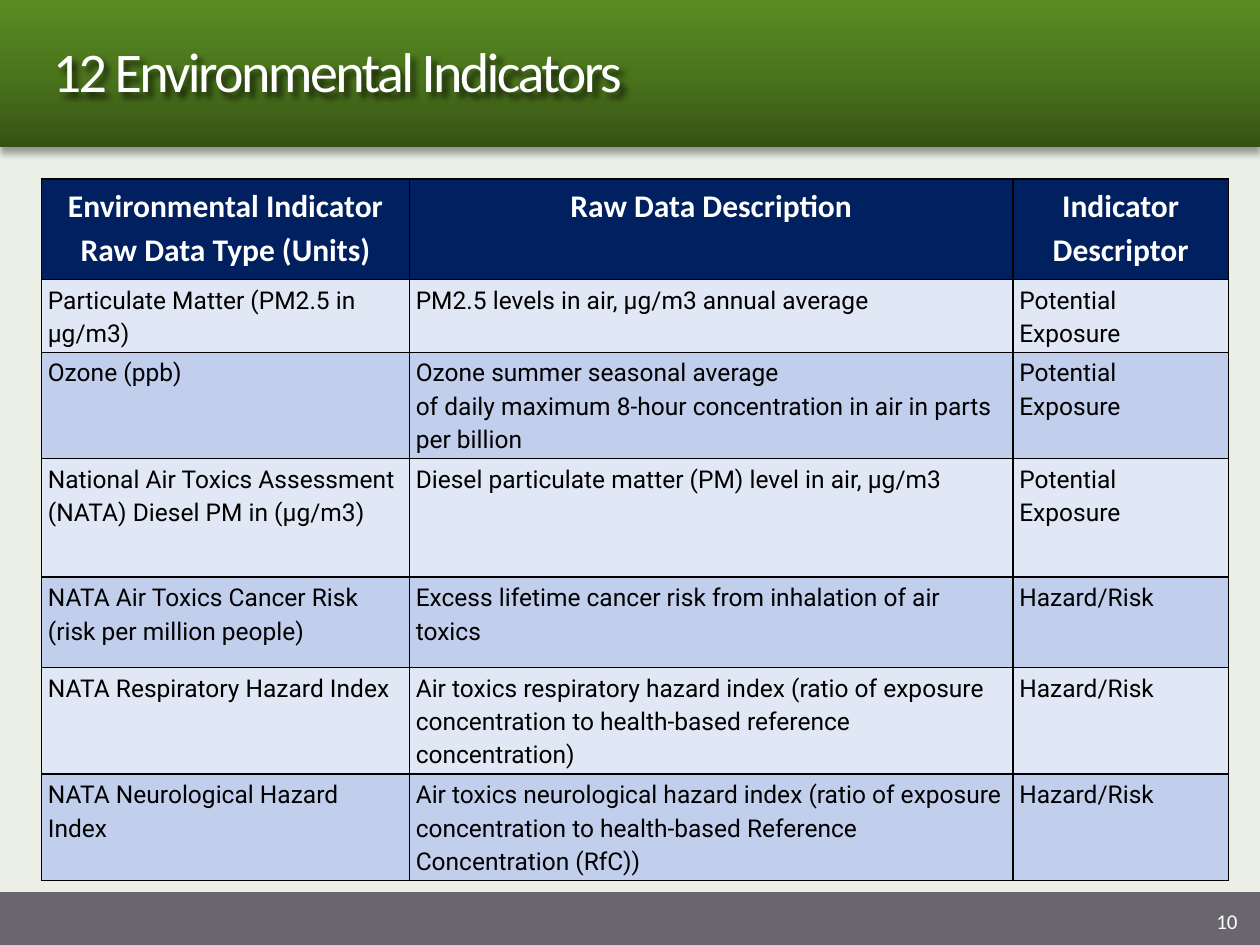
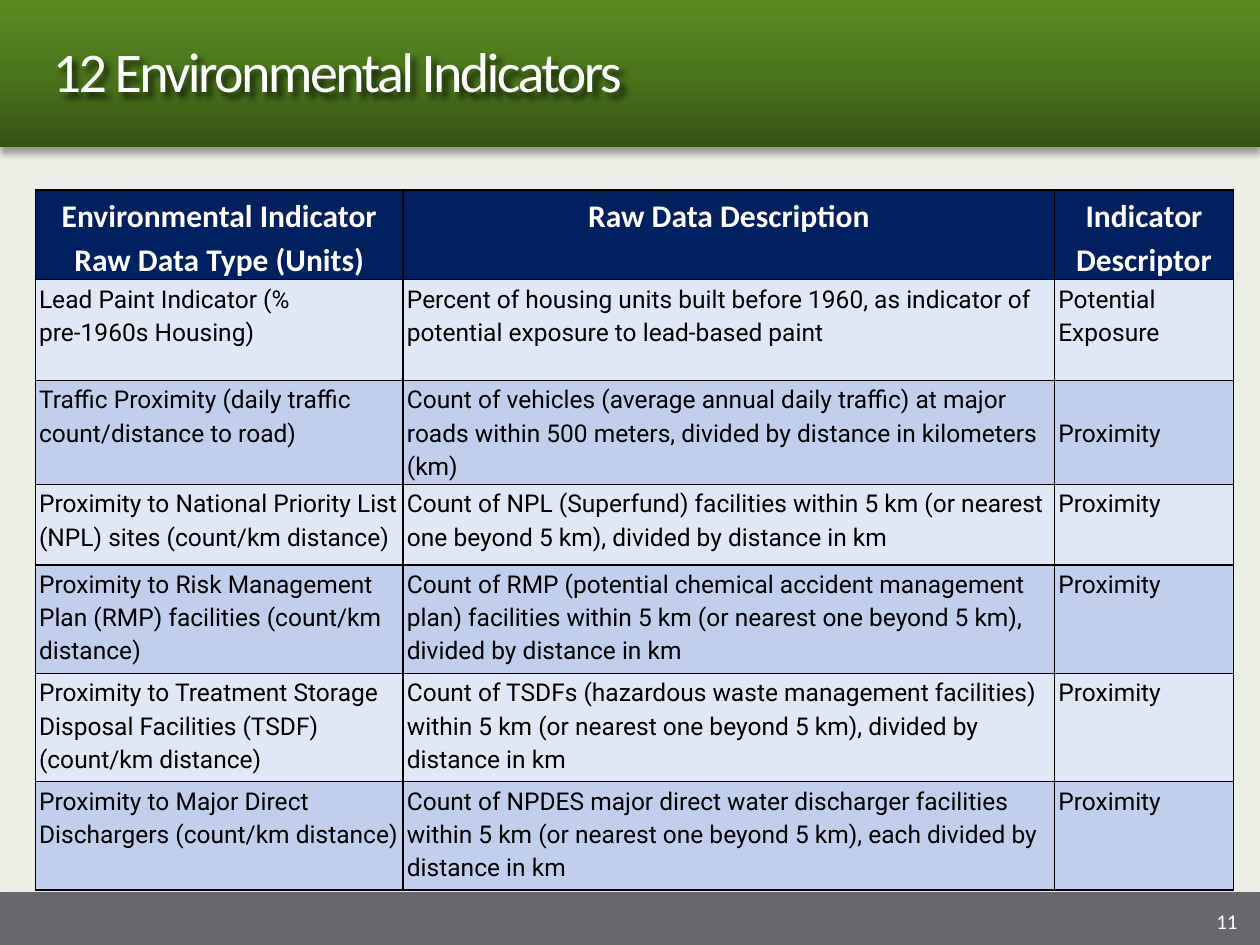
from copy import deepcopy

from pptx import Presentation
from pptx import oxml
from pptx import util as u
from pptx.dml.color import RGBColor
from pptx.enum import shapes, text
from pptx.oxml import ns

PAGE = RGBColor(0xEB, 0xEF, 0xE6)
GREENS = [(0, RGBColor(0x35, 0x52, 0x14)),
          (0.5, RGBColor(0x4B, 0x75, 0x1C)),
          (1, RGBColor(0x59, 0x8B, 0x21))]
GRAY = RGBColor(0x69, 0x67, 0x6D)
NAVY = RGBColor(0x00, 0x20, 0x60)
STRIPES = [RGBColor(0xE0, 0xE7, 0xF5), RGBColor(0xC1, 0xCE, 0xEC)]
WHITE = RGBColor(0xFF, 0xFF, 0xFF)
BLACK = RGBColor(0x00, 0x00, 0x00)

WIDTH, HEIGHT = 10, 7.5
HEADER_H, FOOTER_H = 1.17, 0.42
TITLE = "12 Environmental Indicators"
HEADINGS = ("Environmental Indicator Raw Data Type (Units)",
            "Raw Data Description", "Indicator Descriptor")

PAGES = [
    {
        "number": "10",
        "at": (0.33, 1.42),
        "margins": (0.05, 0.02),
        "cols": [2.92, 4.79, 1.71],
        "rows": [0.8, 0.55, 0.82, 0.94, 0.72, 0.71, 0.82],
        "centred": [],
        "indicators": [
            ("Particulate Matter (PM2.5 in µg/m3)",
             "PM2.5 levels in air, µg/m3 annual average",
             "Potential Exposure"),
            ("Ozone (ppb)",
             "Ozone summer seasonal average\n"
             "of daily maximum 8-hour concentration in air in parts per billion",
             "Potential Exposure"),
            ("National Air Toxics Assessment (NATA) Diesel PM in (µg/m3)",
             "Diesel particulate matter (PM) level in air, µg/m3",
             "Potential Exposure"),
            ("NATA Air Toxics Cancer Risk (risk per million people)",
             "Excess lifetime cancer risk from inhalation of air toxics",
             "Hazard/Risk"),
            ("NATA Respiratory Hazard Index",
             "Air toxics respiratory hazard index (ratio of exposure "
             "concentration to health-based reference concentration)",
             "Hazard/Risk"),
            ("NATA Neurological Hazard Index",
             "Air toxics neurological hazard index (ratio of exposure "
             "concentration to health-based Reference Concentration (RfC))",
             "Hazard/Risk"),
        ],
    },
    {
        "number": "11",
        "at": (0.28, 1.51),
        "margins": (0.03, 0.01),
        "cols": [2.92, 5.17, 1.42],
        "rows": [0.69, 0.8, 0.59, 0.64, 0.86, 0.86, 0.86],
        "centred": [(2, 2)],
        "indicators": [
            ("Lead Paint Indicator (% pre-1960s Housing)",
             "Percent of housing units built before 1960, as indicator of "
             "potential exposure to lead-based paint",
             "Potential\nExposure"),
            ("Traffic Proximity (daily traffic count/distance to road)",
             "Count of vehicles (average annual daily traffic) at major roads "
             "within 500 meters, divided by distance in kilometers (km)",
             "Proximity"),
            ("Proximity to National Priority List (NPL) sites (count/km distance)",
             "Count of NPL (Superfund) facilities within 5 km (or nearest one "
             "beyond 5 km), divided by distance in km",
             "Proximity"),
            ("Proximity to Risk Management Plan (RMP) facilities (count/km distance)",
             "Count of RMP (potential chemical accident management plan) facilities "
             "within 5 km (or nearest one beyond 5 km), divided by distance in km",
             "Proximity"),
            ("Proximity to Treatment Storage Disposal Facilities (TSDF) "
             "(count/km distance)",
             "Count of TSDFs (hazardous waste management facilities) within 5 km "
             "(or nearest one beyond 5 km), divided by distance in km",
             "Proximity"),
            ("Proximity to Major Direct Dischargers (count/km distance)",
             "Count of NPDES major direct water discharger facilities within 5 km "
             "(or nearest one beyond 5 km), each divided by distance in km",
             "Proximity"),
        ],
    },
]


def inches(*lengths):
    return [u.Inches(n) for n in lengths]


def add_run(p, words, size, color, font="Calibri", bold=False):
    r = p.add_run()
    r.text = words
    r.font.size, r.font.name, r.font.bold = u.Pt(size), font, bold
    r.font.color.rgb = color
    return r


def add_shadow(sp, alpha, blur, distance, angle):
    sp.shadow.inherit = False
    effects = sp._element.spPr.find(ns.qn("a:effectLst"))
    effects.append(oxml.parse_xml(
        f'<a:outerShdw {ns.nsdecls("a")} blurRad="{u.Pt(blur)}" '
        f'dist="{u.Pt(distance)}" dir="{angle * 60000}" algn="tl" rotWithShape="0">'
        f'<a:srgbClr val="{BLACK}"><a:alpha val="{alpha * 1000}"/></a:srgbClr>'
        '</a:outerShdw>'))


def add_band(s, top, height):
    sp = s.shapes.add_shape(shapes.MSO_SHAPE.RECTANGLE,
                            *inches(0, top, WIDTH, height))
    sp.line.fill.background()
    add_shadow(sp, 35, 4, 3, 90)
    s.shapes._spTree.remove(sp._element)
    s.shapes._spTree.insert(2, sp._element)
    return sp


def fill_greens(fill):
    fill.gradient()
    fill.gradient_angle = 90
    stops = fill._xPr.find(ns.qn("a:gradFill")).find(ns.qn("a:gsLst"))
    stops.insert(1, deepcopy(stops[0]))
    for stop, (position, color) in zip(fill.gradient_stops, GREENS):
        stop.position = position
        stop.color.rgb = color


def add_frame(s, number):
    footer = add_band(s, HEIGHT - FOOTER_H, FOOTER_H)
    footer.fill.solid()
    footer.fill.fore_color.rgb = GRAY
    fill_greens(add_band(s, 0, HEADER_H).fill)

    title = s.shapes.title
    title.left, title.top, title.width, title.height = inches(0.42, 0.35, 9.17, 0.48)
    tf = title.text_frame
    tf.margin_left = tf.margin_top = tf.margin_right = tf.margin_bottom = 0
    tf.vertical_anchor = text.MSO_ANCHOR.MIDDLE
    tf.auto_size = text.MSO_AUTO_SIZE.SHAPE_TO_FIT_TEXT
    p = tf.paragraphs[0]
    p.alignment, p.line_spacing = text.PP_ALIGN.LEFT, 0.9
    r = add_run(p, TITLE, 32, WHITE)
    r.font._element.set("spc", "-150")
    add_shadow(title, 65, 4, 4, 45)

    tf = s.shapes.add_textbox(*inches(9.17, 7.12, 0.75, 0.38)).text_frame
    tf.word_wrap = True
    tf.vertical_anchor = text.MSO_ANCHOR.MIDDLE
    p = tf.paragraphs[0]
    p.alignment = text.PP_ALIGN.RIGHT
    add_run(p, number, 12, WHITE)


def add_borders(cell):
    tc_pr = cell._tc.get_or_add_tcPr()
    for side in "LRTB":
        tc_pr.append(oxml.parse_xml(
            f'<a:ln{side} {ns.nsdecls("a")} w="{u.Pt(1)}"><a:solidFill>'
            f'<a:srgbClr val="{BLACK}"/></a:solidFill></a:ln{side}>'))


def fill_cell(cell, words, margins, is_heading, color):
    add_borders(cell)
    cell.fill.solid()
    cell.fill.fore_color.rgb = color
    cell.margin_left = cell.margin_right = u.Inches(margins[0])
    cell.margin_top = cell.margin_bottom = u.Inches(margins[1])
    tf = cell.text_frame
    for i, line in enumerate(words.split("\n")):
        p = tf.add_paragraph() if i else tf.paragraphs[0]
        p.line_spacing = 1.15
        if is_heading:
            p.alignment = text.PP_ALIGN.CENTER
            add_run(p, line, 18, WHITE, bold=True)
        else:
            add_run(p, line, 14, BLACK, "Roboto")


def add_indicators(s, page):
    cols, rows = page["cols"], page["rows"]
    table = s.shapes.add_table(len(rows), len(cols), *inches(
        *page["at"], sum(cols), sum(rows))).table
    for column, width in zip(table.columns, cols):
        column.width = u.Inches(width)
    for row, height in zip(table.rows, rows):
        row.height = u.Inches(height)
    for i, record in enumerate([HEADINGS] + page["indicators"]):
        color = STRIPES[(i - 1) % 2] if i else NAVY
        for j, words in enumerate(record):
            fill_cell(table.cell(i, j), words, page["margins"], i == 0, color)
    for i, j in page["centred"]:
        table.cell(i, j).vertical_anchor = text.MSO_ANCHOR.MIDDLE


def main():
    prs = Presentation()
    prs.slide_width, prs.slide_height = inches(WIDTH, HEIGHT)
    background = prs.slide_master.background.fill
    background.solid()
    background.fore_color.rgb = PAGE
    for page in PAGES:
        s = prs.slides.add_slide(prs.slide_layouts[5])
        add_frame(s, page["number"])
        add_indicators(s, page)
    prs.save("out.pptx")


if __name__ == "__main__":
    main()
